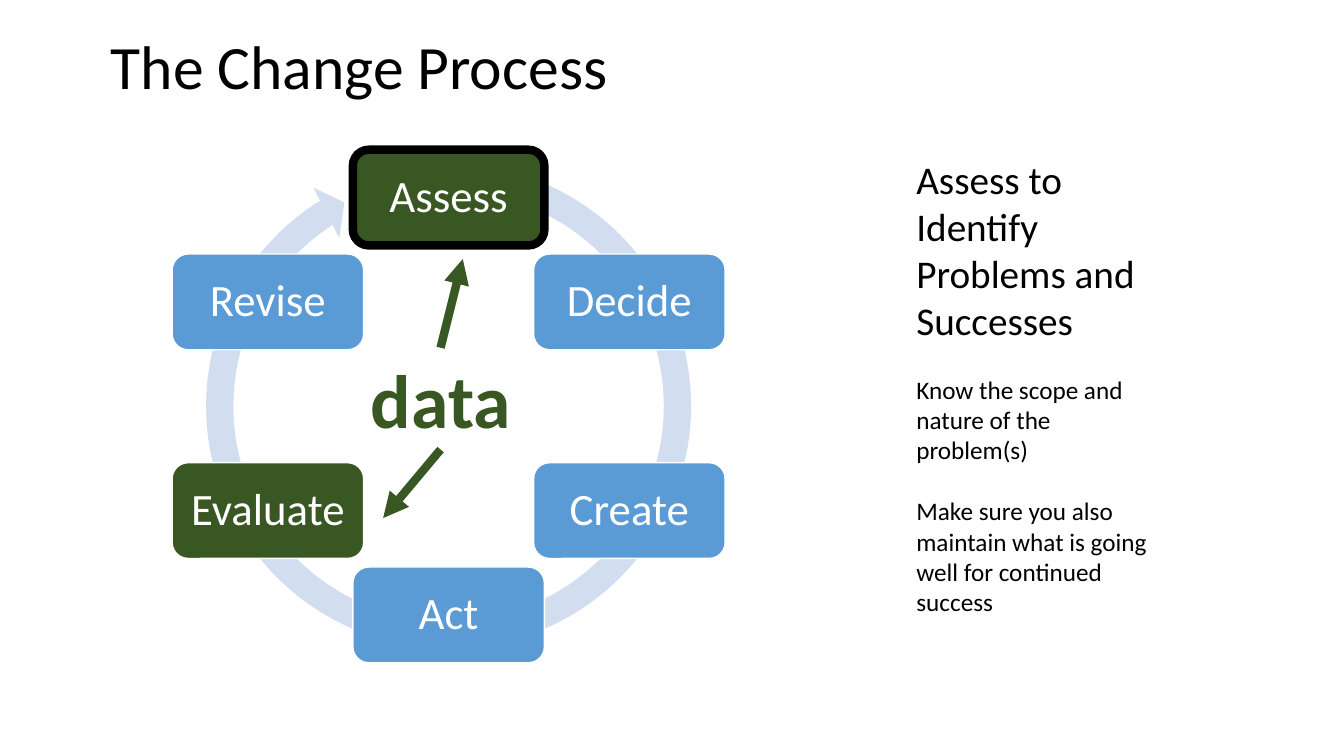
from math import cos, radians, sin

from lxml.etree import SubElement
from pptx import Presentation
from pptx.dml.color import RGBColor
from pptx.enum.shapes import MSO_CONNECTOR, MSO_SHAPE
from pptx.enum.text import MSO_ANCHOR, PP_ALIGN
from pptx.oxml.ns import qn
from pptx.util import Inches, Pt

COLORS = {
    "black": "000000",
    "white": "FFFFFF",
    "blue": "5B9BD5",
    "pale blue": "D2DEEF",
    "green": "385723",
}
FONT = "Calibri"

CENTER_X, CENTER_Y = 4.45, 4.03
STEP_RADIUS = 2.07
STEP_WIDTH, STEP_HEIGHT = 1.9, 0.95
RING_SIZE = 5.1
RING_ADJUSTMENTS = (0.053, 3.126, 142.622, 171.071, 0.055)

# Clockwise from the top: name, fill, outline colour, outline width
STEPS = [
    ("Assess", "green", "black", 6),
    ("Decide", "blue", "white", 1),
    ("Create", "blue", "white", 1),
    ("Act", "blue", "white", 1),
    ("Evaluate", "green", "white", 1),
    ("Revise", "blue", "white", 1),
]

# Text, size, space before
ADVICE = [
    ("Assess to Identify Problems and Successes", 28, 0),
    ("Know the scope and nature of the problem(s)", 18, 22),
    ("Make sure you also maintain what is going well for continued success", 18, 22),
]


def color(name):
    return RGBColor.from_string(COLORS[name])


def add_run(paragraph, text, size, color_name="black", bold=False):
    run = paragraph.add_run()
    run.text = text
    run.font.name = FONT
    run.font.size = Pt(size)
    run.font.bold = bold
    run.font.color.rgb = color(color_name)


def add_text_frame(slide, left, top, width, height, anchor=MSO_ANCHOR.TOP):
    box = slide.shapes.add_textbox(Inches(left), Inches(top), Inches(width), Inches(height))
    frame = box.text_frame
    frame.word_wrap = True
    frame.vertical_anchor = anchor
    return frame


def add_centered_shape(slide, preset, x, y, width, height, fill):
    """Add a filled preset shape whose middle is at x, y."""
    shape = slide.shapes.add_shape(
        preset, Inches(x - width / 2), Inches(y - height / 2), Inches(width), Inches(height)
    )
    shape.shadow.inherit = False
    shape.fill.solid()
    shape.fill.fore_color.rgb = color(fill)
    return shape


def add_ring(slide):
    ring = add_centered_shape(
        slide, MSO_SHAPE.CIRCULAR_ARROW, CENTER_X, CENTER_Y, RING_SIZE, RING_SIZE, "pale blue"
    )
    for index, value in enumerate(RING_ADJUSTMENTS):
        ring.adjustments[index] = value
    ring.line.fill.background()


def add_step(slide, angle, name, fill, outline, outline_width):
    x = CENTER_X + STEP_RADIUS * sin(radians(angle))
    y = CENTER_Y - STEP_RADIUS * cos(radians(angle))
    step = add_centered_shape(
        slide, MSO_SHAPE.ROUNDED_RECTANGLE, x, y, STEP_WIDTH, STEP_HEIGHT, fill
    )
    step.line.color.rgb = color(outline)
    step.line.width = Pt(outline_width)
    frame = step.text_frame
    frame.word_wrap = True
    frame.vertical_anchor = MSO_ANCHOR.MIDDLE
    frame.margin_left = frame.margin_right = Inches(0.13)
    frame.margin_top = frame.margin_bottom = Inches(0.13)
    paragraph = frame.paragraphs[0]
    paragraph.alignment = PP_ALIGN.CENTER
    paragraph.line_spacing = 0.9
    add_run(paragraph, name, 32, "white")


def add_advice(slide):
    frame = add_text_frame(slide, 8.99, 1.49, 2.49, 4.88)
    for index, (text, size, space_before) in enumerate(ADVICE):
        paragraph = frame.add_paragraph() if index else frame.paragraphs[0]
        paragraph.space_before = Pt(space_before)
        add_run(paragraph, text, size)


def add_arrow(slide, start, end):
    arrow = slide.shapes.add_connector(
        MSO_CONNECTOR.STRAIGHT, *(Inches(value) for value in (*start, *end))
    )
    arrow.line.color.rgb = color("green")
    arrow.line.width = Pt(6)
    SubElement(arrow.line._get_or_add_ln(), qn("a:tailEnd"), type="triangle")
    SubElement(arrow._element.spPr, qn("a:effectLst"))


def main():
    presentation = Presentation()
    presentation.slide_width = Inches(13.33)
    presentation.slide_height = Inches(7.5)
    slide = presentation.slides.add_slide(presentation.slide_layouts[6])

    title = add_text_frame(slide, 1, -0.04, 11.5, 1.45, MSO_ANCHOR.MIDDLE).paragraphs[0]
    title.line_spacing = 0.9
    add_run(title, "The Change Process", 44)

    add_ring(slide)
    for index, step in enumerate(STEPS):
        add_step(slide, index * 360 / len(STEPS), *step)

    add_advice(slide)
    data_label = add_text_frame(slide, 3.58, 3.45, 1.59, 1.01).paragraphs[0]
    add_run(data_label, "data", 54, "green", bold=True)
    add_arrow(slide, (4.37, 3.45), (4.59, 2.57))
    add_arrow(slide, (4.37, 4.46), (3.8, 5.14))

    presentation.save("out.pptx")


if __name__ == "__main__":
    main()
